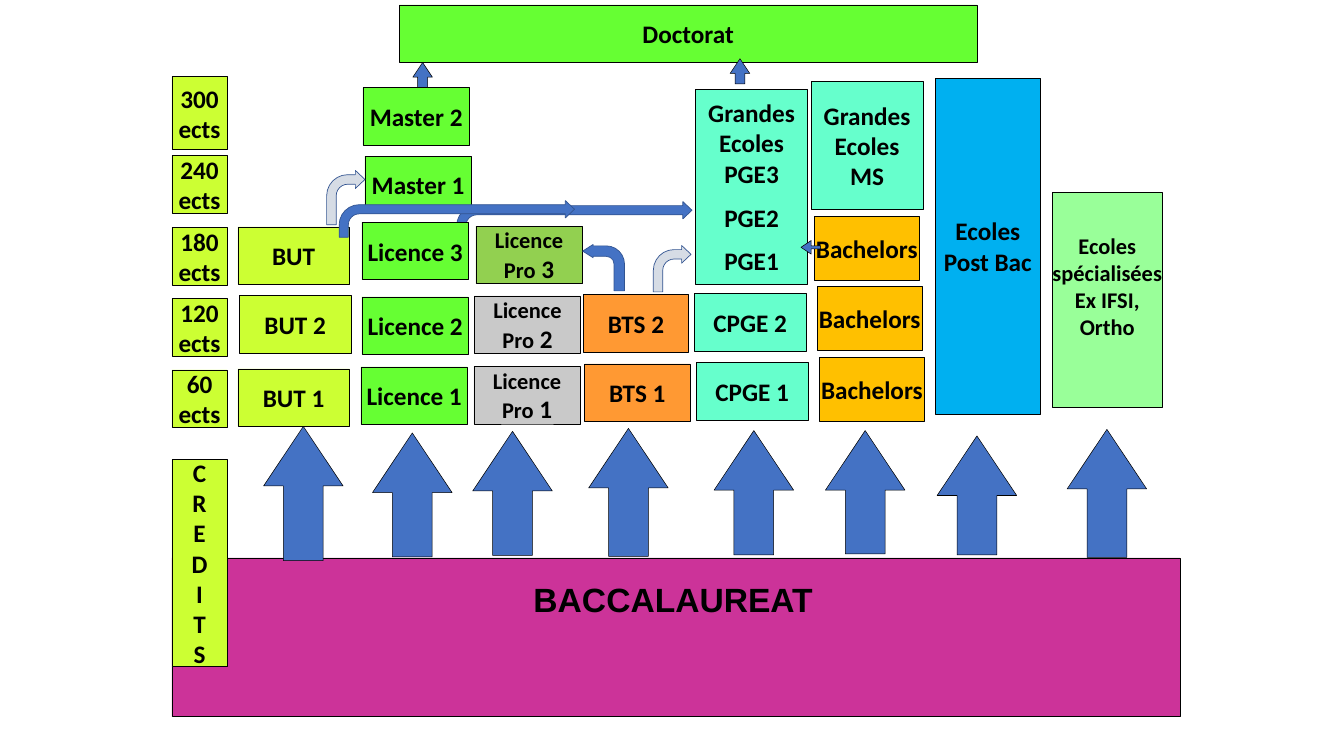
from typing import NamedTuple

from pptx import Presentation
from pptx import util as u
from pptx.dml.color import RGBColor
from pptx.enum import shapes as sh, text as tx

BLACK = RGBColor(0, 0, 0)
LIME = RGBColor(0xCC, 0xFF, 0x33)
GREEN = RGBColor(0x66, 0xFF, 0x33)
OLIVE = RGBColor(0x92, 0xD0, 0x50)
GREY = RGBColor(0xC9, 0xC9, 0xC9)
ORANGE = RGBColor(0xFF, 0x99, 0x33)
MINT = RGBColor(0x66, 0xFF, 0xCC)
GOLD = RGBColor(0xFF, 0xC0, 0x00)
SKY = RGBColor(0x00, 0xB0, 0xF0)
PALE = RGBColor(0x99, 0xFF, 0x99)
PINK = RGBColor(0xCC, 0x33, 0x99)
BLUE = RGBColor(0x44, 0x72, 0xC4)
NAVY = RGBColor(0x32, 0x54, 0x91)
MIST = RGBColor(0xD6, 0xDC, 0xE5)

KIND = sh.MSO_SHAPE
HEAD = (0.5, 0.749)
BEND = (0.25, 0.236, 0.25, 0.55)
TURN = (0.25, 0.159, 0.25, 0.438)


class Area(NamedTuple):
    left: float
    top: float
    wide: float
    tall: float


class Cell(NamedTuple):
    left: float
    top: float
    label: str
    tail: str = ""


class Stack(NamedTuple):
    fill: RGBColor
    wide: float
    tall: float
    cells: list[Cell]
    size: int = 36


class Bend(NamedTuple):
    area: Area
    fill: RGBColor = BLUE
    adj: tuple = BEND
    flip: bool = False


STACKS = [
    Stack(LIME, 2.79, 3.68, [Cell(8.66, 3.86, "300\nects")]),
    Stack(LIME, 2.79, 2.9, [
        Cell(8.66, 7.85, "240\nects"), Cell(8.66, 11.46, "180\nects"),
        Cell(8.66, 15.04, "120\nects"), Cell(8.66, 18.64, "60\nects")]),
    Stack(LIME, 2.79, 10.44, [Cell(8.66, 23.16, "\n".join("CREDITS"))]),
    Stack(LIME, 5.61, 2.9, [
        Cell(11.99, 11.43, "BUT"), Cell(12.07, 14.88, "BUT 2"),
        Cell(11.99, 18.59, "BUT 1")]),
    Stack(GREEN, 5.36, 2.9, [
        Cell(18.29, 4.42, "Master 2"), Cell(18.39, 7.87, "Master 1"),
        Cell(18.24, 11.2, "Licence 3"), Cell(18.24, 14.96, "Licence 2"),
        Cell(18.19, 18.49, "Licence 1")]),
    Stack(OLIVE, 5.36, 2.9, [Cell(23.98, 11.4, "Licence\nPro", " 3")], 32),
    Stack(GREY, 5.36, 2.9, [
        Cell(23.9, 14.91, "Licence\nPro", " 2"),
        Cell(23.88, 18.47, "Licence\nPro", " 1")], 32),
    Stack(ORANGE, 5.31, 2.9, [
        Cell(29.39, 14.83, "BTS 2"), Cell(29.46, 18.34, "BTS 1")]),
    Stack(MINT, 5.64, 2.9, [
        Cell(34.98, 14.78, "CPGE 2"), Cell(35.08, 18.26, "CPGE 1")]),
    Stack(GOLD, 5.31, 3.23, [
        Cell(41.02, 10.9, "Bachelors"), Cell(41.17, 14.43, "Bachelors"),
        Cell(41.28, 18.01, "Bachelors")]),
    Stack(MINT, 5.64, 6.45, [Cell(40.87, 4.11, "Grandes\nEcoles\nMS")]),
    Stack(SKY, 5.31, 16.92, [Cell(47.12, 3.94, "Ecoles\nPost Bac")]),
    Stack(GREEN, 29.11, 2.9, [Cell(20.12, 0.25, "Doctorat")]),
]

RISES = [
    Area(13.28, 21.49, 4.01, 6.76), Area(18.77, 21.82, 4.01, 6.25),
    Area(23.82, 21.74, 4.01, 6.25), Area(29.66, 21.59, 4.01, 6.45),
    Area(35.98, 21.7, 4.01, 6.27), Area(41.59, 21.7, 4.01, 6.22),
    Area(47.22, 21.97, 4.01, 5.99), Area(53.77, 21.64, 4.01, 6.45),
    Area(20.8, 3.15, 0.99, 2.92),
]

BENDS = [
    Bend(Area(29.36, 12.32, 2.11, 2.34), adj=TURN, flip=True),
    Bend(Area(16.46, 8.59, 1.93, 2.74), MIST),
    Bend(Area(32.92, 12.37, 1.9, 2.34), MIST),
    Bend(Area(17.09, 10.11, 11.86, 1.85)),
]


def place(area: Area) -> list:
    return [u.Cm(side) for side in area]


def draw(slide, kind, area: Area, fill: RGBColor, adj: tuple = (),
         line: RGBColor = BLACK, thick: float = 0.75):
    shape = slide.shapes.add_shape(kind, *place(area))
    shape.shadow.inherit = False
    shape.fill.solid()
    shape.fill.fore_color.rgb = fill
    shape.line.color.rgb = line
    shape.line.width = u.Pt(thick)
    for rank, part in enumerate(adj):
        shape.adjustments[rank] = part
    return shape


def write(shape, words: str, *, size: int = 36, font: str = "Calibri",
          tail: str = "", wrap: bool = False, gaps: tuple = (),
          foot: float = 0.13, anchor=tx.MSO_ANCHOR.MIDDLE) -> None:
    frame = shape.text_frame
    frame.word_wrap = wrap
    frame.vertical_anchor = anchor
    frame.margin_bottom = u.Cm(foot)
    lines = words.split("\n")
    for rank, line in enumerate(lines):
        para = frame.add_paragraph() if rank else frame.paragraphs[0]
        para.alignment = tx.PP_ALIGN.CENTER
        if rank in gaps:
            para.space_before = u.Pt(19.5)
        runs = [(line, size)]
        if tail and rank == len(lines) - 1:
            runs.append((tail, 36))
        for part, high in runs:
            run = para.add_run()
            run.text = part
            run.font.size = u.Pt(high)
            run.font.name = font
            run.font.bold = True
            run.font.color.rgb = BLACK


def pile(slide, stack: Stack) -> None:
    for cell in stack.cells:
        area = Area(cell.left, cell.top, stack.wide, stack.tall)
        box = draw(slide, KIND.RECTANGLE, area, stack.fill)
        write(box, cell.label, size=stack.size, tail=cell.tail)


def curve(slide, bend: Bend) -> None:
    shape = draw(slide, KIND.BENT_ARROW, bend.area, bend.fill, bend.adj, NAVY, 1)
    if bend.flip:
        shape.element.spPr.xfrm.set("flipH", "1")


def main() -> None:
    deck = Presentation()
    deck.slide_width, deck.slide_height = u.Cm(67.72), u.Cm(38.1)
    slide = deck.slides.add_slide(deck.slide_layouts[6])

    curve(slide, Bend(Area(23.01, 10.16, 11.86, 1.85)))
    draw(slide, KIND.RECTANGLE, Area(8.66, 28.12, 50.8, 8), PINK)
    title = slide.shapes.add_textbox(*place(Area(18.26, 29.06, 31.32, 2.31)))
    write(title, "BACCALAUREAT", size=48, font="Arial", wrap=True,
          anchor=tx.MSO_ANCHOR.TOP)
    for area in RISES:
        draw(slide, KIND.UP_ARROW, area, BLUE, HEAD)
    for stack in STACKS:
        pile(slide, stack)

    grand = draw(slide, KIND.RECTANGLE, Area(35.05, 4.5, 5.64, 9.83), MINT)
    write(grand, "Grandes\nEcoles\nPGE3\nPGE2\nPGE1", gaps=(3, 4))
    care = draw(slide, KIND.RECTANGLE, Area(53.04, 9.7, 5.51, 10.82), PALE)
    write(care, "Ecoles\nspécialisées\nEx IFSI,\nOrtho", size=32, foot=1.5)

    draw(slide, KIND.LEFT_ARROW, Area(40.36, 12.12, 0.99, 0.69), BLUE, (0.224, 0.749))
    draw(slide, KIND.UP_ARROW, Area(36.79, 2.96, 0.99, 1.27), BLUE, HEAD)
    for bend in BENDS:
        curve(slide, bend)
    deck.save("out.pptx")


if __name__ == "__main__":
    main()
